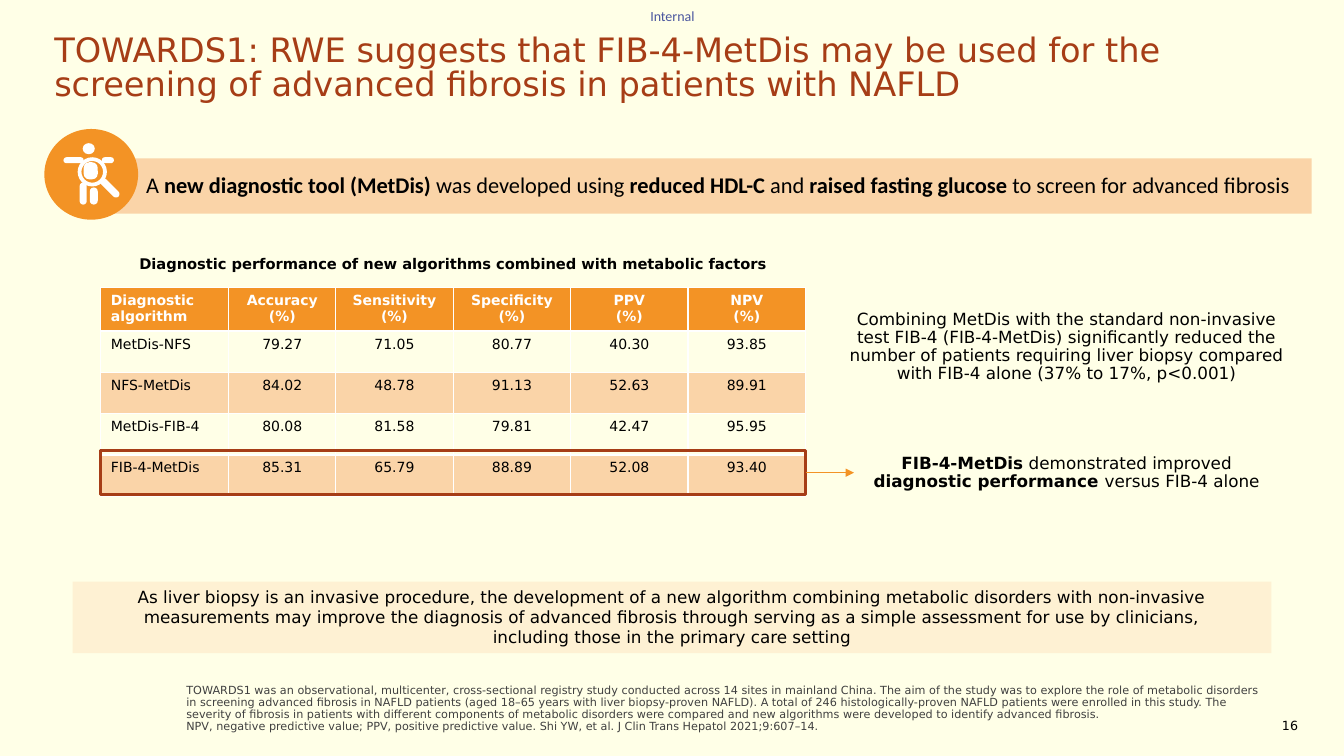
from dataclasses import dataclass

from lxml import etree
from pptx import Presentation
from pptx import util as u
from pptx.dml import color
from pptx.enum import shapes, text
from pptx.oxml import ns

KIND = shapes.MSO_SHAPE
TOP, MID, LOW = text.MSO_ANCHOR.TOP, text.MSO_ANCHOR.MIDDLE, text.MSO_ANCHOR.BOTTOM
LEFT, MIDST = text.PP_ALIGN.LEFT, text.PP_ALIGN.CENTER


@dataclass(frozen=True)
class Theme:
    sans: str = "DejaVu Sans"
    narrow: str = "Calibri"
    page: str = "FFFFE7"
    ink: str = "000000"
    white: str = "FFFFFF"
    rust: str = "A63D16"
    orange: str = "F39325"
    peach: str = "FAD4A8"
    cream: str = "FEF1D3"
    grey: str = "404040"
    slate: str = "4A569E"
    title: float = 24
    lead: float = 16
    body: float = 12
    head: float = 10.5
    small: float = 10
    page_no: float = 9
    note: float = 8


def rgb(code):
    return color.RGBColor.from_string(code)


def sub(node, tag, **attrs):
    return etree.SubElement(node, ns.qn(tag), **attrs)


class Deck:
    def __init__(self, theme):
        self.theme = theme
        self.show = Presentation()
        self.show.slide_width = u.Inches(13.33)
        self.show.slide_height = u.Inches(7.5)
        self.slide = self.show.slides.add_slide(self.show.slide_layouts[6])
        fill = self.slide.background.fill
        fill.solid()
        fill.fore_color.rgb = rgb(theme.page)

    def words(self, frame, words, size, tint=None, font=None, bold=False,
              align=LEFT, space=None, before=0, after=0):
        para = frame.paragraphs[0]
        para.alignment = align
        para.line_spacing = space
        para.space_before, para.space_after = u.Pt(before), u.Pt(after)
        heavy = set()
        if "*" in words:
            for i, part in enumerate(words.split("*")):
                for j, line in enumerate(part.split("\v")):
                    if j:
                        para.add_line_break()
                    if line:
                        run = para.add_run()
                        run.text = line
                        if i % 2:
                            heavy.add(len(para.runs) - 1)
        else:
            para.text = words
        for i, run in enumerate(para.runs):
            run.font.name = font or self.theme.sans
            run.font.size = u.Pt(size)
            run.font.bold = bold or i in heavy
            run.font.color.rgb = rgb(tint or self.theme.ink)

    def label(self, box, words, size, anchor=TOP, pad=(0.1, 0.05), **style):
        item = self.slide.shapes.add_textbox(*map(u.Inches, box))
        frame = item.text_frame
        frame.word_wrap = True
        frame.vertical_anchor = anchor
        frame.margin_left = frame.margin_right = u.Inches(pad[0])
        frame.margin_top = frame.margin_bottom = u.Inches(pad[1])
        self.words(frame, words, size, **style)

    def shape(self, kind, box, fill=None, line=None, adjust=None, turn=0):
        item = self.slide.shapes.add_shape(kind, *map(u.Inches, box))
        item.shadow.inherit = False
        item.rotation = turn
        if adjust is not None:
            item.adjustments[0] = adjust
        if fill:
            item.fill.solid()
            item.fill.fore_color.rgb = rgb(fill)
        else:
            item.fill.background()
        if line:
            item.line.color.rgb = rgb(line)
            item.line.width = u.Pt(2.25)
        else:
            item.line.fill.background()
        return item

    def panel(self, box, fill, words, size, anchor=TOP, inset=0.1, **style):
        frame = self.shape(KIND.RECTANGLE, box, fill).text_frame
        frame.word_wrap = True
        frame.vertical_anchor = anchor
        frame.margin_left = u.Inches(inset)
        self.words(frame, words, size, **style)

    def arrow(self, start, end, tint):
        x, y = map(u.Inches, end)
        item = self.slide.shapes.add_connector(shapes.MSO_CONNECTOR.STRAIGHT, 0, y, x, y)
        item.begin_connect(start, 3)
        item.line.color.rgb = rgb(tint)
        item.line.width = u.Pt(0.5)
        props = item._element.spPr
        sub(props.find(ns.qn("a:ln")), "a:tailEnd", type="triangle")
        sub(props, "a:effectLst")

    def cell(self, cell, words, fill, **style):
        edges = cell._tc.get_or_add_tcPr()
        for side in "LRTB":
            line = sub(edges, f"a:ln{side}", w=str(u.Pt(1)))
            sub(sub(line, "a:solidFill"), "a:srgbClr", val=self.theme.white)
        if fill:
            cell.fill.solid()
            cell.fill.fore_color.rgb = rgb(fill)
        else:
            cell.fill.background()
        self.words(cell.text_frame, words, self.theme.small, **style)

    def table(self, box, widths, rows):
        t = self.theme
        grid = self.slide.shapes.add_table(len(rows), len(widths), *map(u.Inches, box)).table
        grid.first_row = grid.horz_banding = False
        for col, width in zip(grid.columns, widths):
            col.width = u.Inches(width)
        for r, row in enumerate(rows):
            fill = t.orange if r == 0 else None if r % 2 else t.peach
            for c, words in enumerate(row):
                self.cell(grid.cell(r, c), words, fill, bold=r == 0,
                          tint=t.ink if r else t.white, align=MIDST if c else LEFT)

    def icon(self):
        t = self.theme
        self.shape(KIND.OVAL, (0.44, 1.28, 0.93, 0.9), t.orange)
        bar = KIND.ROUNDED_RECTANGLE
        parts = [
            (KIND.OVAL, (0.82, 1.42, 0.12, 0.11), None, 0),
            (bar, (0.63, 1.56, 0.2, 0.06), 0.5, 0),
            (bar, (1.01, 1.56, 0.12, 0.06), 0.5, 0),
            (bar, (0.79, 1.81, 0.07, 0.22), 0.5, 0),
            (bar, (0.89, 1.86, 0.08, 0.17), 0.5, 0),
            (bar, (0.83, 1.61, 0.14, 0.17), 0.4, 0),
            (KIND.DONUT, (0.77, 1.56, 0.29, 0.29), 0.13, 0),
            (bar, (0.97, 1.83, 0.24, 0.07), 0.5, 45),
        ]
        for kind, box, adjust, turn in parts:
            self.shape(kind, box, t.white, adjust=adjust, turn=turn)


def main():
    t = Theme()
    deck = Deck(t)
    claim = dict(align=MIDST, space=0.9, before=10, after=18)

    deck.label((6.45, 0.07, 0.6, 0.17), "Internal", t.small, pad=(0, 0), font=t.narrow, tint=t.slate)
    deck.label((12.51, 7.07, 0.57, 0.25), "16", t.page_no, MID, align=MIDST)
    deck.label((0.44, 0.29, 12.43, 0.79),
               "TOWARDS1: RWE suggests that FIB-4-MetDis may be used for the screening of "
               "advanced fibrosis in patients with NAFLD", t.title, MID, tint=t.rust, space=0.85)

    deck.table((1, 2.85, 6.99, 2.05), [1.27, 1.06] + [1.165] * 4, [
        ["Diagnostic algorithm", "Accuracy (%)", "Sensitivity (%)", "Specificity (%)",
         "PPV\v(%)", "NPV\v(%)"],
        ["MetDis-NFS", "79.27", "71.05", "80.77", "40.30", "93.85"],
        ["NFS-MetDis", "84.02", "48.78", "91.13", "52.63", "89.91"],
        ["MetDis-FIB-4", "80.08", "81.58", "79.81", "42.47", "95.95"],
        ["FIB-4-MetDis", "85.31", "65.79", "88.89", "52.08", "93.40"],
    ])
    deck.label((1.75, 6.82, 10.9, 0.5),
               "TOWARDS1 was an observational, multicenter, cross-sectional registry study conducted "
               "across 14 sites in mainland China. The aim of the study was to explore the role of "
               "metabolic disorders in screening advanced fibrosis in NAFLD patients (aged 18–65 years "
               "with liver biopsy-proven NAFLD). A total of 246 histologically-proven NAFLD patients "
               "were enrolled in this study. The severity of fibrosis in patients with different "
               "components of metabolic disorders were compared and new algorithms were developed to "
               "identify advanced fibrosis.\vNPV, negative predictive value; PPV, positive predictive "
               "value. Shi YW, et al. J Clin Trans Hepatol 2021;9:607–14.",
               t.note, LOW, tint=t.grey, space=0.9, before=12)
    deck.label((0.79, 2.48, 7.41, 0.29),
               "Diagnostic performance of new algorithms combined with metabolic factors",
               t.head, bold=True, align=MIDST)
    frame = deck.shape(KIND.ROUNDED_RECTANGLE, (1, 4.47, 6.99, 0.44), line=t.rust, adjust=0)

    deck.panel((1.05, 1.57, 11.96, 0.55), t.peach,
               "A *new diagnostic tool (MetDis) *was developed using *reduced HDL-C *and "
               "*raised fasting glucose *to screen for advanced fibrosis",
               t.lead, MID, inset=0.4, font=t.narrow, space=0.9, before=10, after=18)
    deck.icon()
    deck.label((8.25, 3.06, 4.66, 0.77),
               "Combining MetDis with the standard non-invasive test FIB-4 (FIB-4-MetDis) "
               "significantly reduced the number of patients requiring liver biopsy compared with "
               "FIB-4 alone (37% to 17%, p<0.001)", t.body, MID, **claim)
    deck.label((8.3, 4.29, 4.56, 0.8),
               "*FIB-4-MetDis* demonstrated improved\v*diagnostic performance *versus FIB-4 alone",
               t.body, MID, **claim)
    deck.arrow(frame, (8.47, 4.69), t.orange)
    deck.panel((0.72, 5.77, 11.89, 0.71), t.cream,
               "As liver biopsy is an invasive procedure, the development of a new algorithm combining "
               "metabolic disorders with non-invasive measurements may improve the diagnosis of "
               "advanced fibrosis through serving as a simple assessment for use by clinicians,"
               "\vincluding those in the primary care setting", t.body, align=MIDST)
    deck.show.save("out.pptx")


if __name__ == "__main__":
    main()
